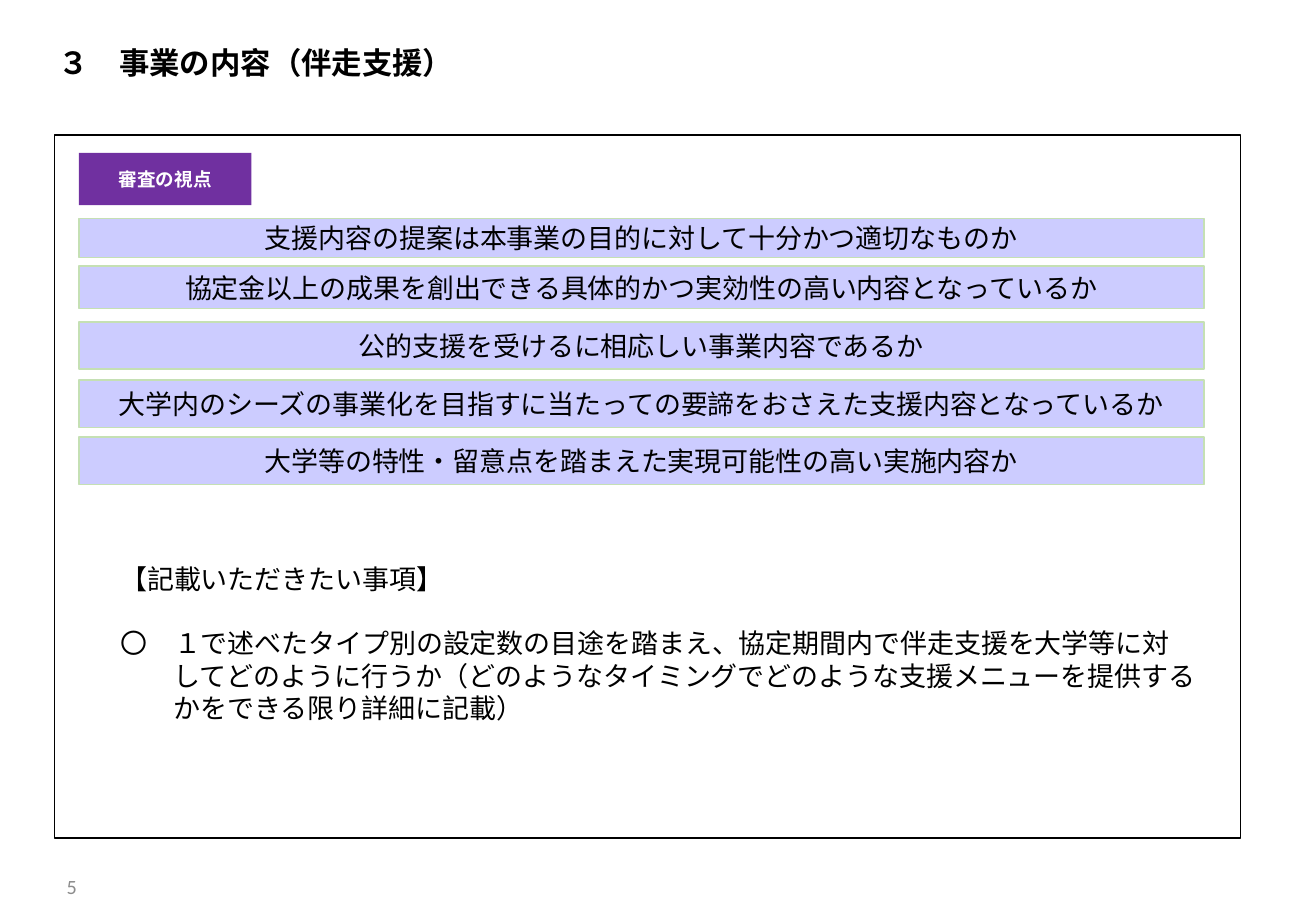
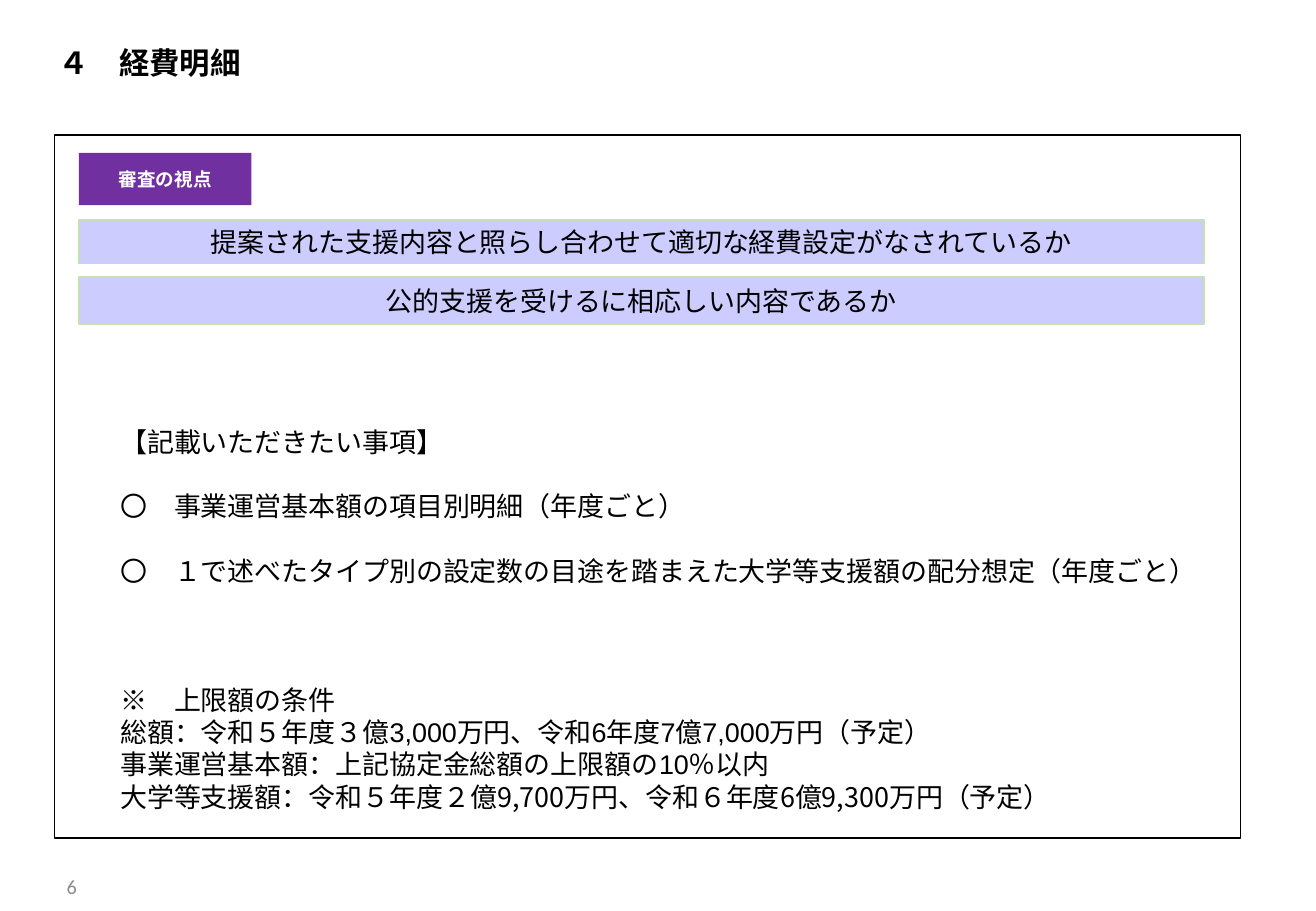
from lxml.etree import SubElement
from pptx import Presentation
from pptx.dml.color import RGBColor
from pptx.enum.shapes import MSO_SHAPE as Shape
from pptx.enum.text import MSO_ANCHOR as Anchor, PP_ALIGN as Align
from pptx.oxml.ns import qn
from pptx.util import Inches, Pt

BLACK = RGBColor(0x00, 0x00, 0x00)
WHITE = RGBColor(0xFF, 0xFF, 0xFF)
GREY = RGBColor(0x8C, 0x8C, 0x8C)
PURPLE = RGBColor(0x70, 0x30, 0xA0)
LILAC = RGBColor(0xCC, 0xCC, 0xFF)
GREEN = RGBColor(0xC5, 0xE0, 0xB4)

ARIAL, CALIBRI, NOTO = "Arial", "Calibri", "Noto Sans CJK JP"
FRAME = (0.45, 1.11, 9.76, 5.79)
PAD = 0.04
LINE = 19.15

PAGES = [
    dict(
        num="5",
        title="３　事業の内容（伴走支援）",
        bands=[
            (0.69, 0.32, "支援内容の提案は本事業の目的に対して十分かつ適切なものか", CALIBRI),
            (1.08, 0.35, "協定金以上の成果を創出できる具体的かつ実効性の高い内容となっているか", ARIAL),
            (1.54, 0.39, "公的支援を受けるに相応しい事業内容であるか", ARIAL),
            (2.02, 0.39, "大学内のシーズの事業化を目指すに当たっての要諦をおさえた支援内容となっているか", CALIBRI),
            (2.49, 0.39, "大学等の特性・留意点を踏まえた実現可能性の高い実施内容か", CALIBRI),
        ],
        top=3.52,
        notes=[
            (0, ["【記載いただきたい事項】"]),
            (1, ["〇　１で述べたタイプ別の設定数の目途を踏まえ、協定期間内で伴走支援を大学等に対\v"
                 "してどのように行うか（どのようなタイミングでどのような支援メニューを提供する\v"
                 "かをできる限り詳細に記載）"]),
        ],
    ),
    dict(
        num="6",
        title="４　経費明細",
        bands=[
            (0.7, 0.36, "提案された支援内容と照らし合わせて適切な経費設定がなされているか", CALIBRI),
            (1.17, 0.39, "公的支援を受けるに相応しい内容であるか", ARIAL),
        ],
        top=2.39,
        notes=[
            (0, ["【記載いただきたい事項】"]),
            (1, ["〇　事業運営基本額の項目別明細（年度ごと）"]),
            (1, ["〇　１で述べたタイプ別の設定数の目途を踏まえた大学等支援額の配分想定（年度ごと）"]),
            (3, ["※　上限額の条件"]),
            (0, ["総額：令和５年度３億3,000万円、令和6年度7億7,000万円（予定）"]),
            (0, ["事業運営基本額：上記協定金総額の上限額の10％以内"]),
            (0, ["大学等支援額：", "令和５年度２億9,700万円、令和６年度6億9,300万円（予定）"]),
        ],
    ),
]


def write(para, text, size=16, font=ARIAL, color=BLACK, bold=False, align=Align.LEFT):
    """Add text to a paragraph, with line breaks at vertical tabs."""
    para.alignment = align
    for i, part in enumerate(text.split("\v")):
        if i:
            para.add_line_break()
        run = para.add_run()
        run.text = part
        face = run.font
        face.size, face.bold, face.name = Pt(size), bold, font
        face.color.rgb = color
        SubElement(face._element, qn("a:ea")).set("typeface", NOTO)


def fit(shape, pad=PAD, anchor=Anchor.MIDDLE, wrap=True):
    """Set the margins of a shape's text and return its frame."""
    frame = shape.text_frame
    frame.margin_left = frame.margin_right = Inches(pad)
    frame.margin_top = frame.margin_bottom = Inches(pad)
    frame.vertical_anchor, frame.word_wrap = anchor, wrap
    return frame


def block(slide, box, fill, line=None):
    """Draw a flat rectangle."""
    shape = slide.shapes.add_shape(Shape.RECTANGLE, *map(Inches, box))
    shape.shadow.inherit = False
    shape.fill.solid()
    shape.fill.fore_color.rgb = fill
    if line is None:
        shape.line.fill.background()
    else:
        shape.line.color.rgb = line
        shape.line.width = Pt(1)
    return shape


def head(slide, box, text):
    """Place the title."""
    title = slide.shapes.title
    title.left, title.top, title.width, title.height = map(Inches, box)
    write(fit(title).paragraphs[0], text, size=18, font=CALIBRI, bold=True)


def body(slide, box, top, notes):
    """Draw the frame with its notes, starting at top within it."""
    frame = fit(block(slide, box, WHITE, BLACK), anchor=Anchor.TOP)
    frame.margin_top = Inches(top)
    for i, (gap, parts) in enumerate(notes):
        para = frame.add_paragraph() if i else frame.paragraphs[0]
        para.line_spacing = Pt(LINE)
        para.space_before = Pt(gap * LINE)
        hang = 0.44 if parts[0][0] == "〇" else 0
        props = para._p.get_or_add_pPr()
        props.set("marL", str(Inches(0.5 + hang)))
        props.set("indent", str(Inches(-hang)))
        for part, font in zip(parts, (ARIAL, NOTO)):
            write(para, part, font=font)


def views(slide, box, bands):
    """Draw the tag and the bands of review points inside the frame box."""
    left, top, wide, _ = box
    tag = block(slide, (left + 0.2, top + 0.15, 1.42, 0.43), PURPLE)
    write(fit(tag).paragraphs[0], "審査の視点", size=11, color=WHITE, bold=True, align=Align.CENTER)
    for down, high, text, font in bands:
        band = block(slide, (left + 0.2, top + down, wide - 0.5, high), LILAC, GREEN)
        write(fit(band).paragraphs[0], text, font=font, align=Align.CENTER)


def foot(slide, box, num):
    """Place the page number."""
    frame = fit(slide.shapes.add_textbox(*map(Inches, box)), pad=0, wrap=False)
    write(frame.paragraphs[0], num, size=12, font=CALIBRI, color=GREY, align=Align.CENTER)


def main():
    """Build and save the slides."""
    deck = Presentation()
    deck.slide_width, deck.slide_height = Inches(10.83), Inches(7.5)
    for page in PAGES:
        slide = deck.slides.add_slide(deck.slide_layouts[5])
        head(slide, (0.44, 0.32, 4.05, 0.38), page["title"])
        body(slide, FRAME, page["top"], page["notes"])
        views(slide, FRAME, page["bands"])
        foot(slide, (0.49, 7.2, 0.2, 0.19), page["num"])
    deck.save("out.pptx")


if __name__ == "__main__":
    main()
